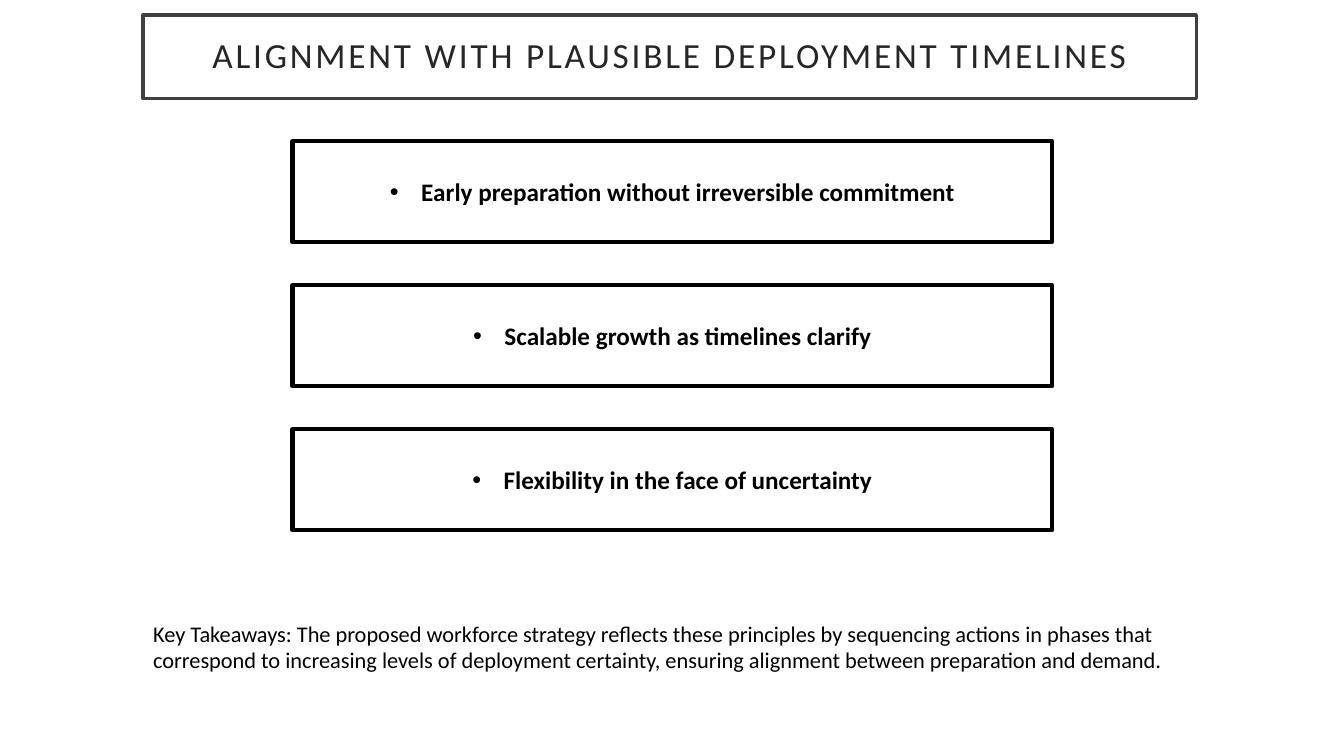
import lxml.etree
import pptx
import pptx.dml.color
import pptx.enum.shapes
import pptx.enum.text
import pptx.oxml.ns
import pptx.util
from pptx.util import Cm

TITLE = "ALIGNMENT WITH PLAUSIBLE DEPLOYMENT TIMELINES"
PRINCIPLES = [
    "Early preparation without irreversible commitment",
    "Scalable growth as timelines clarify",
    "Flexibility in the face of uncertainty",
]
TAKEAWAY = (
    "Key Takeaways: The proposed workforce strategy reflects these principles "
    "by sequencing actions in phases that correspond to increasing levels of "
    "deployment certainty, ensuring alignment between preparation and demand."
)
THEME = {
    "font": "Calibri",
    "bullet_font": "Arial",
    "paper": "FFFFFF",
    "ink": "000000",
    "title_ink": "262626",
    "title_line": "404040",
    "title_size": 25.2,
    "principle_size": 18,
    "takeaway_size": 16,
}

SLIDE_WIDTH, SLIDE_HEIGHT = 33.87, 19.05
MARGIN_LEFT = 3.61
TITLE_TOP, TITLE_WIDTH, TITLE_HEIGHT, TITLE_INSET = 0.38, 26.54, 2.11, 0.51
BOX_LEFT, BOX_TOP, BOX_WIDTH, BOX_HEIGHT, BOX_GAP = 7.37, 3.56, 19.15, 2.54, 1.09
BULLET_INDENT = 0.79
TAKEAWAY_TOP, TAKEAWAY_WIDTH, TAKEAWAY_HEIGHT = 15.49, 27.05, 2.39


def color(name):
    return pptx.dml.color.RGBColor.from_string(THEME[name])


def set_font(paragraph, size, ink, bold=False):
    font = paragraph.font
    font.name = THEME["font"]
    font.size = pptx.util.Pt(THEME[size])
    font.color.rgb = color(ink)
    font.bold = bold


def add_frame(slide, left, top, width, height, line, weight, text):
    shape = slide.shapes.add_shape(
        pptx.enum.shapes.MSO_SHAPE.RECTANGLE,
        Cm(left), Cm(top), Cm(width), Cm(height),
    )
    shape.shadow.inherit = False
    shape.fill.solid()
    shape.fill.fore_color.rgb = color("paper")
    shape.line.color.rgb = color(line)
    shape.line.width = pptx.util.Pt(weight)
    frame = shape.text_frame
    frame.word_wrap = True
    frame.vertical_anchor = pptx.enum.text.MSO_ANCHOR.MIDDLE
    paragraph = frame.paragraphs[0]
    paragraph.text = text
    paragraph.alignment = pptx.enum.text.PP_ALIGN.CENTER
    return frame, paragraph


def add_bullet(paragraph):
    properties = paragraph._p.get_or_add_pPr()
    properties.set("marL", str(Cm(BULLET_INDENT)))
    properties.set("indent", str(-Cm(BULLET_INDENT)))
    qn = pptx.oxml.ns.qn
    lxml.etree.SubElement(properties, qn("a:buFont")).set("typeface", THEME["bullet_font"])
    lxml.etree.SubElement(properties, qn("a:buChar")).set("char", "•")


def add_title(slide):
    frame, paragraph = add_frame(
        slide, MARGIN_LEFT, TITLE_TOP, TITLE_WIDTH, TITLE_HEIGHT,
        "title_line", 2.5, TITLE,
    )
    frame.margin_left = frame.margin_right = Cm(TITLE_INSET)
    frame.margin_top = frame.margin_bottom = Cm(TITLE_INSET)
    paragraph.line_spacing = 0.9
    set_font(paragraph, "title_size", "title_ink")
    paragraph.runs[0].font._element.set("spc", "200")


def add_principles(slide):
    for index, principle in enumerate(PRINCIPLES):
        top = BOX_TOP + index * (BOX_HEIGHT + BOX_GAP)
        frame, paragraph = add_frame(
            slide, BOX_LEFT, top, BOX_WIDTH, BOX_HEIGHT, "ink", 3, principle
        )
        add_bullet(paragraph)
        set_font(paragraph, "principle_size", "ink", bold=True)


def add_takeaway(slide):
    box = slide.shapes.add_textbox(
        Cm(MARGIN_LEFT), Cm(TAKEAWAY_TOP), Cm(TAKEAWAY_WIDTH), Cm(TAKEAWAY_HEIGHT)
    )
    box.text_frame.word_wrap = True
    paragraph = box.text_frame.paragraphs[0]
    paragraph.text = TAKEAWAY
    set_font(paragraph, "takeaway_size", "ink")


def main():
    presentation = pptx.Presentation()
    presentation.slide_width = Cm(SLIDE_WIDTH)
    presentation.slide_height = Cm(SLIDE_HEIGHT)
    slide = presentation.slides.add_slide(presentation.slide_layouts[6])
    add_title(slide)
    add_takeaway(slide)
    add_principles(slide)
    presentation.save("out.pptx")


if __name__ == "__main__":
    main()
